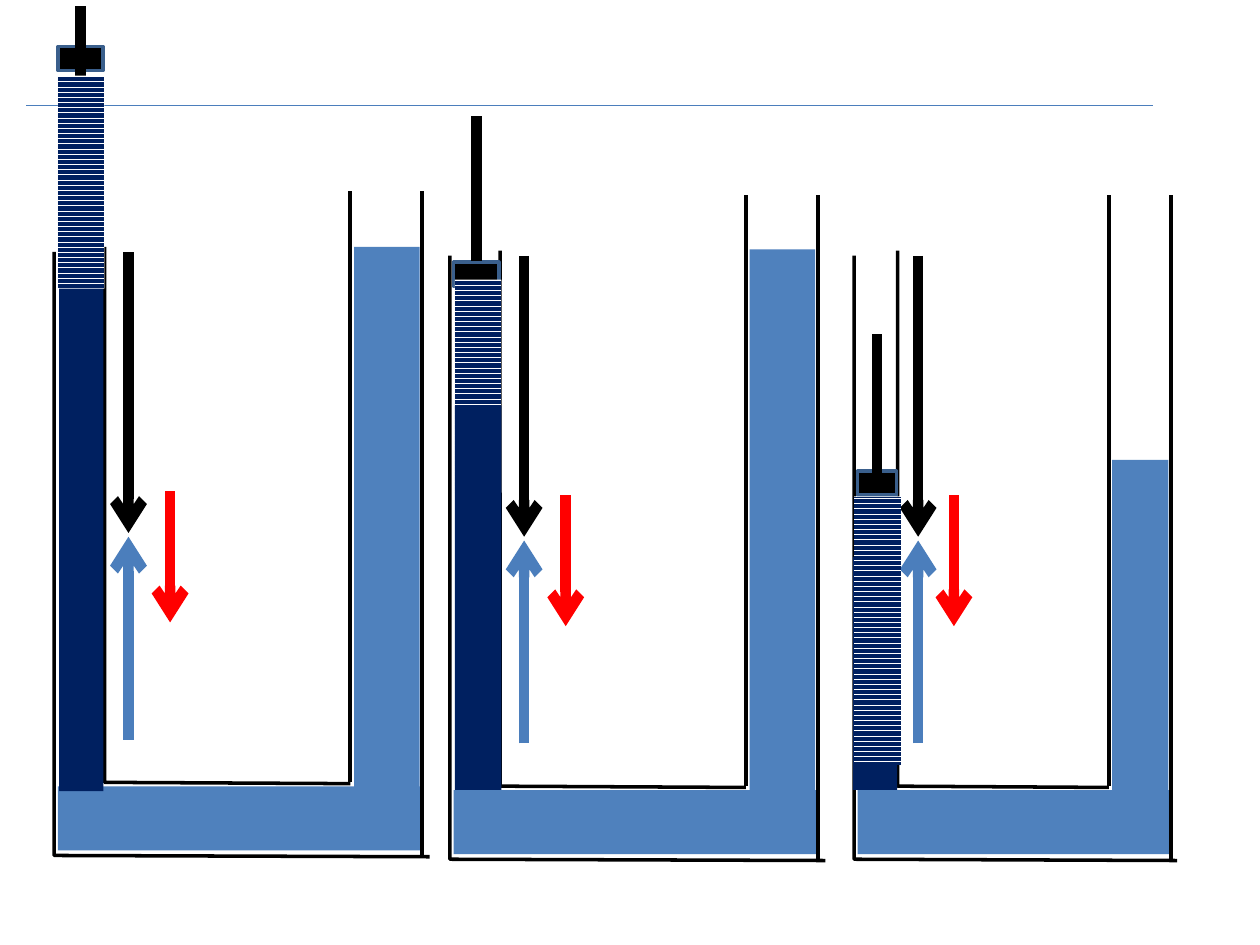
from dataclasses import dataclass

import pptx
import pptx.dml.color
import pptx.enum.dml
import pptx.enum.shapes
import pptx.oxml.ns
import pptx.oxml.xmlchemy
import pptx.util
from pptx.util import Inches

BLACK, RED = "000000", "FF0000"
WATER, NAVY, STEEL = "4F81BD", "002060", "4B7EBC"


@dataclass(frozen=True)
class Layer:
    left: float
    top: float
    width: float
    height: float
    striped: bool = False


@dataclass(frozen=True)
class Tube:
    left: float
    top: float
    scale: float
    piston_top: float
    rod_top: float
    rod_bottom: float
    water_top: float
    layers: tuple[Layer, Layer]

    def x(self, offset: float) -> float:
        return self.left + offset * self.scale

    def y(self, offset: float) -> float:
        return self.top + offset


TUBES = [
    Tube(0.43, 2.0, 1, 0.37, 0.05, 1.21, 1.96,
         (Layer(0.47, 1.98, 0.35, 4.3), Layer(0.46, 0.6, 0.37, 1.69, True))),
    Tube(3.57, 2.03, 1, 2.08, 0.92, 2.07, 1.98,
         (Layer(3.61, 2.22, 0.37, 1.69, True), Layer(3.61, 3.22, 0.37, 3.05))),
    Tube(6.78, 2.03, 0.86, 3.74, 2.65, 3.81, 3.65,
         (Layer(6.77, 4.42, 0.35, 1.85), Layer(6.78, 3.94, 0.37, 2.13, True))),
]


def color(hex_code: str) -> pptx.dml.color.RGBColor:
    return pptx.dml.color.RGBColor.from_string(hex_code)


def add_block(slide, left: float, top: float, width: float, height: float,
              fill: str, outline: str = "", striped: bool = False) -> None:
    block = slide.shapes.add_shape(
        pptx.enum.shapes.MSO_SHAPE.RECTANGLE,
        Inches(left), Inches(top), Inches(width), Inches(height))
    block.shadow.inherit = False
    if striped:
        block.fill.patterned()
        block.fill.pattern = pptx.enum.dml.MSO_PATTERN.DARK_HORIZONTAL
        block.fill.fore_color.rgb = color(fill)
        block.fill.back_color.rgb = color("FFFFFF")
    else:
        block.fill.solid()
        block.fill.fore_color.rgb = color(fill)
    if outline:
        block.line.color.rgb = color(outline)
        block.line.width = pptx.util.Pt(2)
    else:
        block.line.fill.background()


def add_line(slide, start: tuple[float, float], end: tuple[float, float],
             line_color: str, weight: float, arrow: bool = False) -> None:
    line = slide.shapes.add_connector(
        pptx.enum.shapes.MSO_CONNECTOR.STRAIGHT,
        *(Inches(value) for value in start + end))
    line.line.color.rgb = color(line_color)
    line.line.width = pptx.util.Pt(weight)
    properties = line._element.spPr
    if arrow:
        stroke = properties.find(pptx.oxml.ns.qn("a:ln"))
        head = pptx.oxml.xmlchemy.OxmlElement("a:tailEnd")
        head.set("type", "arrow")
        stroke.append(head)
    properties.append(pptx.oxml.xmlchemy.OxmlElement("a:effectLst"))


def add_wall(slide, points: list[tuple[float, float]]) -> None:
    first, *rest = [(Inches(x), Inches(y)) for x, y in points]
    builder = slide.shapes.build_freeform(*first)
    builder.add_line_segments(rest, close=False)
    wall = builder.convert_to_shape()
    wall.shadow.inherit = False
    wall.fill.background()
    wall.line.color.rgb = color(BLACK)
    wall.line.width = pptx.util.Pt(2)


def add_tube(slide, tube: Tube) -> None:
    x, y, scale = tube.x, tube.y, tube.scale
    add_block(slide, x(0.03), y(4.24), 2.9 * scale, 0.51, WATER)
    add_wall(slide, [(x(2.98), y(4.8)), (x(0), y(4.79)), (x(0), y(0))])
    add_wall(slide, [(x(2.35), y(4.22)), (x(0.4), y(4.21)), (x(0.4), y(-0.04))])

    add_block(slide, x(0.03), tube.piston_top, 0.36 * scale, 0.19, BLACK, "3A5F8C")
    add_line(slide, (x(0.21), tube.rod_bottom), (x(0.21), tube.rod_top), BLACK, 6)

    for offset, start, end, arrow_color in [
        (0.59, 3.87, 2.26, STEEL), (0.59, 0, 2.23, BLACK), (0.92, 1.9, 2.94, RED),
    ]:
        add_line(slide, (x(offset), y(start)), (x(offset), y(end)),
                 arrow_color, 6, arrow=True)

    for offset, bottom in [(2.35, 4.21), (2.92, 4.8)]:
        add_line(slide, (x(offset), y(bottom)), (x(offset), y(-0.48)), BLACK, 2.25)
    add_block(slide, x(2.38), tube.water_top, 0.52 * scale,
              y(4.25) - tube.water_top, WATER)

    for layer in tube.layers:
        add_block(slide, layer.left, layer.top, layer.width, layer.height,
                  NAVY, striped=layer.striped)


def main() -> None:
    deck = pptx.Presentation()
    deck.slide_width, deck.slide_height = Inches(10), Inches(7.5)
    slide = deck.slides.add_slide(deck.slide_layouts[6])
    add_line(slide, (0.21, 0.84), (9.15, 0.84), STEEL, 0.75)
    for tube in TUBES:
        add_tube(slide, tube)
    deck.save("out.pptx")


if __name__ == "__main__":
    main()
